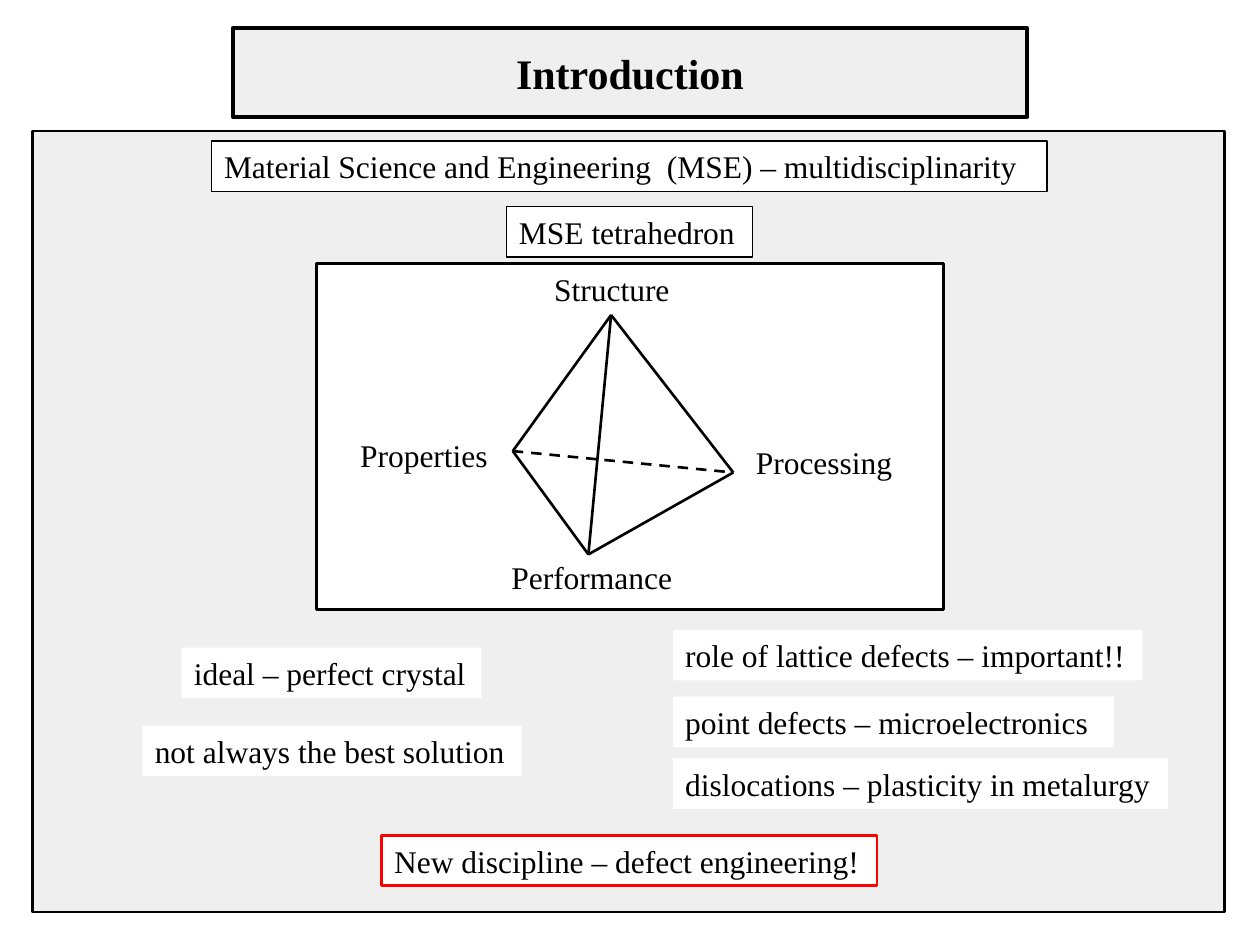
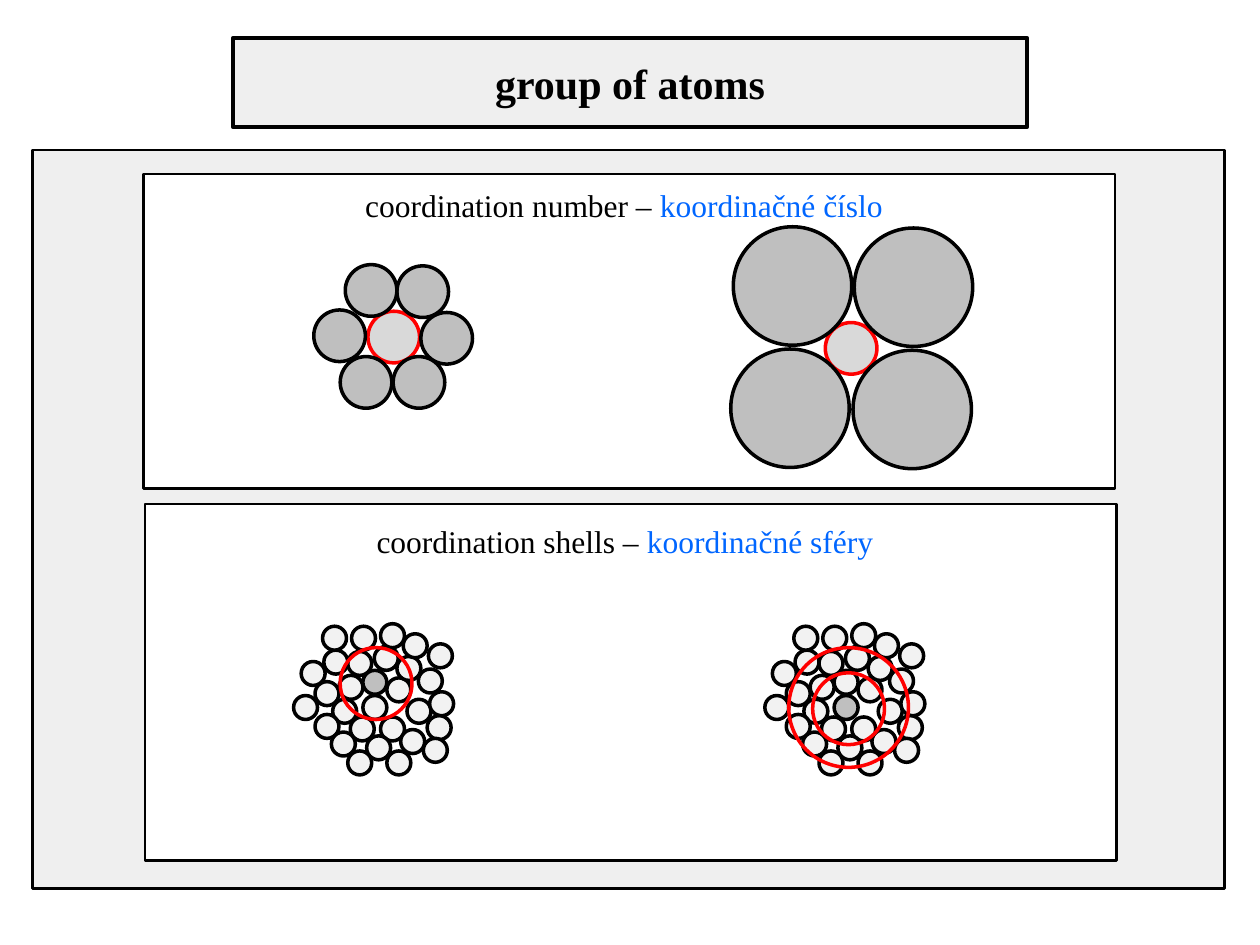
"""Build two slides on materials science: the MSE tetrahedron and groups of atoms."""
from itertools import combinations

from pptx import Presentation
from pptx.dml.color import RGBColor
from pptx.enum.dml import MSO_LINE_DASH_STYLE as Dash
from pptx.enum.shapes import MSO_CONNECTOR as Connector, MSO_SHAPE as Shape
from pptx.enum.text import MSO_ANCHOR as Anchor, MSO_AUTO_SIZE as AutoSize, PP_ALIGN as Align
from pptx.oxml.ns import qn
from pptx.util import Inches, Pt

COLOURS = {
    "ink": "000000", "paper": "FFFFFF", "band": "EFEFEF", "accent": "FF0000",
    "slovak": "0066FF", "atom": "BFBFBF", "centre": "D9D9D9", "pale": "F2F2F2",
}
FONT = "Times New Roman"

CORNERS = {
    "Structure": (4.85, 2.5), "Properties": (4.07, 3.58),
    "Processing": (5.82, 3.75), "Performance": (4.67, 4.4),
}
CORNER_LABELS = {
    "Structure": (4.3, 2.09, 1.16), "Properties": (2.76, 3.41, 1.26),
    "Processing": (5.9, 3.47, 1.29), "Performance": (3.96, 4.38, 1.52),
}
HIDDEN_EDGE = ("Properties", "Processing")
STATEMENTS = [
    ("ideal – perfect crystal", 1.44, 5.14, 2.38),
    ("not always the best solution", 1.13, 5.76, 3.01),
    ("role of lattice defects – important!!", 5.34, 5, 3.73),
    ("point defects – microelectronics", 5.34, 5.53, 3.5),
    ("dislocations – plasticity in metalurgy", 5.34, 6.02, 3.93),
]

SIX_NEIGHBOURS = [(3.12, 2.83), (3.34, 2.48), (2.7, 2.83),
                  (3.15, 2.11), (2.74, 2.1), (2.49, 2.46)]
FOUR_NEIGHBOURS = [(6.78, 1.81), (6.77, 2.78), (5.8, 2.77), (5.82, 1.8)]
CLUSTER = [
    (2.88, 5.32), (3.07, 5.38), (2.88, 5.52), (2.69, 5.36), (2.76, 5.17),
    (2.97, 5.13), (2.79, 4.97), (2.57, 5.16), (3.15, 5.21), (2.64, 5.55),
    (2.5, 5.41), (2.78, 5.69), (3.02, 5.69), (3.23, 5.55), (2.39, 5.25),
    (3.02, 4.95), (3.2, 5.03), (3.32, 5.31), (3.41, 5.49), (3.18, 5.79),
    (2.91, 5.84), (2.5, 5.67), (2.33, 5.52), (2.63, 5.81), (2.76, 5.96),
    (3.39, 5.68), (3.4, 5.11), (2.56, 4.97), (3.07, 5.96), (3.36, 5.86),
]
CLUSTER_SHIFT = 3.74
SMALL, MEDIUM, LARGE = 0.19, 0.41, 0.94


class Deck:
    def __init__(self):
        self.prs = Presentation()
        self.prs.slide_width, self.prs.slide_height = Inches(10), Inches(7.5)
        self.slide = None

    def colour(self, name):
        return RGBColor.from_string(COLOURS[name])

    def paint(self, shape, fill, line, weight):
        if fill:
            shape.fill.solid()
            shape.fill.fore_color.rgb = self.colour(fill)
        else:
            shape.fill.background()
        if line:
            shape.line.color.rgb = self.colour(line)
            shape.line.width = Pt(weight)
        else:
            shape.line.fill.background()

    def style(self, run, size=18, colour="ink", bold=False):
        run.font.name, run.font.size, run.font.bold = FONT, Pt(size), bold
        run.font.color.rgb = self.colour(colour)

    def start(self, heading, top):
        self.slide = self.prs.slides.add_slide(self.prs.slide_layouts[5])
        title = self.slide.shapes.title
        title.left, title.top = Inches(1.85), Inches(top)
        title.width, title.height = Inches(6.3), Inches(0.71)
        self.paint(title, "band", "ink", 2.25)
        frame = title.text_frame
        frame.text = heading
        frame.vertical_anchor = Anchor.MIDDLE
        frame.paragraphs[0].alignment = Align.CENTER
        self.style(frame.paragraphs[0].runs[0], 24, bold=True)

    def preset(self, kind, left, top, width, height, fill, line="ink", weight=1.5):
        shape = self.slide.shapes.add_shape(
            kind, Inches(left), Inches(top), Inches(width), Inches(height))
        shape.shadow.inherit = False
        self.paint(shape, fill, line, weight)

    def panel(self, left, top, width, height, fill="paper"):
        self.preset(Shape.RECTANGLE, left, top, width, height, fill)

    def circle(self, left, top, size, fill=None, line="ink"):
        self.preset(Shape.OVAL, left, top, size, size, fill, line, 2)

    def label(self, text, left, top, width, fill=None, line=None, weight=0.75, slovak=None):
        box = self.slide.shapes.add_textbox(
            Inches(left), Inches(top), Inches(width), Inches(0.4))
        self.paint(box, fill, line, weight)
        frame = box.text_frame
        frame.text = text
        frame.word_wrap = False
        frame.auto_size = AutoSize.SHAPE_TO_FIT_TEXT
        self.style(frame.paragraphs[0].runs[0])
        if slovak:
            translation = frame.paragraphs[0].add_run()
            translation.text = slovak
            self.style(translation, colour="slovak")

    def edge(self, start, end, dashed):
        line = self.slide.shapes.add_connector(
            Connector.STRAIGHT, *(Inches(value) for value in (*start, *end)))
        line.line.color.rgb = self.colour("ink")
        line.line.width = Pt(1.5)
        if dashed:
            line.line.dash_style = Dash.DASH
        properties = line._element.spPr
        properties.append(properties.makeelement(qn("a:effectLst"), {}))


def introduction(deck):
    deck.start("Introduction", 0.22)
    deck.panel(0.26, 1.04, 9.46, 6.2, "band")
    deck.label("Material Science and Engineering  (MSE) – multidisciplinarity",
               1.68, 1.12, 6.63, "paper", "ink")
    deck.label("MSE tetrahedron", 4.02, 1.64, 1.95, "paper", "ink")
    deck.panel(2.51, 2.09, 4.98, 2.75)
    for ends in combinations(CORNERS, 2):
        deck.edge(*(CORNERS[end] for end in ends), ends == HIDDEN_EDGE)
    for corner, place in CORNER_LABELS.items():
        deck.label(corner, *place)
    for statement in STATEMENTS:
        deck.label(*statement, fill="paper")
    deck.label("New discipline – defect engineering!", 3.03, 6.63, 3.93,
               "paper", "accent", 1.5)


def group_of_atoms(deck):
    deck.start("group of atoms", 0.3)
    deck.panel(0.26, 1.19, 9.46, 5.86, "band")

    deck.panel(1.14, 1.38, 7.71, 2.5)
    deck.label("coordination number – ", 2.8, 1.43, 4.4, slovak="koordinačné číslo")
    for centre, neighbours, size in (((2.92, 2.47), SIX_NEIGHBOURS, MEDIUM),
                                     ((6.55, 2.56), FOUR_NEIGHBOURS, LARGE)):
        deck.circle(*centre, MEDIUM, "centre", "accent")
        for neighbour in neighbours:
            deck.circle(*neighbour, size, "atom")

    deck.panel(1.15, 4, 7.71, 2.83)
    deck.label("coordination shells – ", 2.89, 4.09, 4.2, slovak="koordinačné sféry")
    for shift, centre in ((0, CLUSTER[0]), (CLUSTER_SHIFT, CLUSTER[2])):
        for atom in CLUSTER:
            deck.circle(atom[0] + shift, atom[1], SMALL,
                        "atom" if atom == centre else "pale")
    for shell in ((2.7, 5.14, 0.57), (6.45, 5.34, 0.57), (6.26, 5.14, 0.95)):
        deck.circle(*shell, line="accent")


def main():
    deck = Deck()
    introduction(deck)
    group_of_atoms(deck)
    deck.prs.save("out.pptx")


if __name__ == "__main__":
    main()
